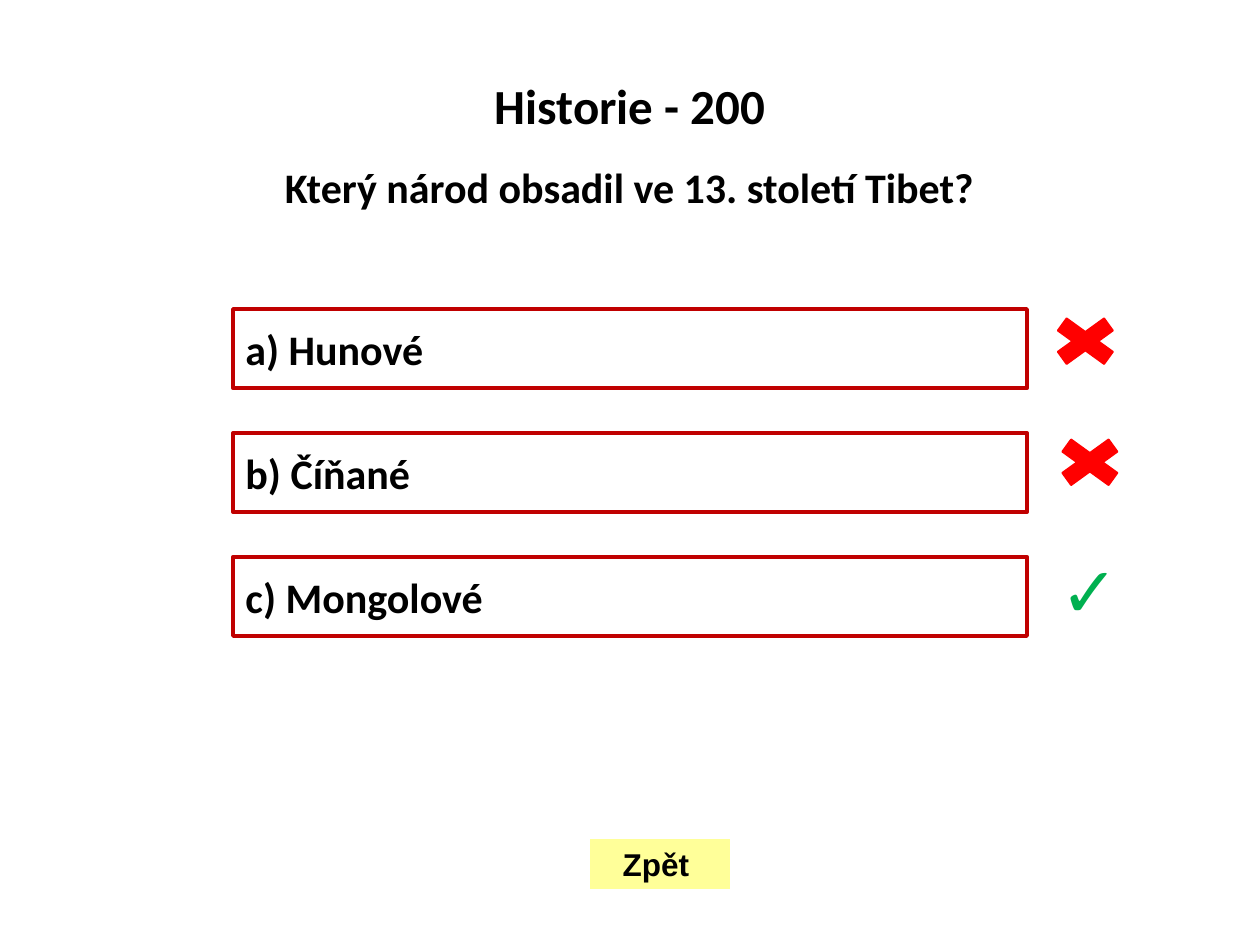
from pptx import Presentation
from pptx.dml.color import RGBColor
from pptx.enum.shapes import MSO_SHAPE
from pptx.enum.text import MSO_ANCHOR, PP_ALIGN
from pptx.util import Pt

BLACK = RGBColor(0x00, 0x00, 0x00)
DARK_RED = RGBColor(0xC0, 0x00, 0x00)
RED = RGBColor(0xFF, 0x00, 0x00)
GREEN = RGBColor(0x00, 0xB0, 0x50)
YELLOW = RGBColor(0xFF, 0xFF, 0x99)


def write(sp, text, size=24, font='Calibri', color=BLACK,
          align=PP_ALIGN.LEFT, anchor=MSO_ANCHOR.TOP, wrap=True):
    tf = sp.text_frame
    tf.word_wrap = wrap
    tf.vertical_anchor = anchor
    p = tf.paragraphs[0]
    p.alignment = align
    r = p.add_run()
    r.text = text
    r.font.size = Pt(size)
    r.font.name = font
    r.font.bold = True
    r.font.color.rgb = color
    return p


prs = Presentation()
prs.slide_width, prs.slide_height = Pt(720), Pt(540)
s = prs.slides.add_slide(prs.slide_layouts[5])

title = s.shapes.title
title.left, title.top, title.width, title.height = Pt(0), Pt(43.2), Pt(720), Pt(57)
p = write(title, 'Historie - 200', size=28, align=PP_ALIGN.CENTER)
p.line_spacing = 0.9

question = s.shapes.add_textbox(Pt(121.7), Pt(88.6), Pt(476), Pt(36))
write(question, 'Který národ obsadil ve 13. století Tibet?', align=PP_ALIGN.CENTER)

for i, answer in enumerate(['a) Hunové', 'b) Číňané', 'c) Mongolové']):
    sp = s.shapes.add_shape(MSO_SHAPE.ACTION_BUTTON_CUSTOM,
                            Pt(133.2), Pt(176.6 + i * 70.8), Pt(453.6), Pt(45.2))
    sp.shadow.inherit = False
    sp.fill.background()
    sp.line.color.rgb = DARK_RED
    sp.line.width = Pt(2.25)
    write(sp, answer, anchor=MSO_ANCHOR.MIDDLE, wrap=False)

for left, top in [(594.7, 176.6), (597.3, 245.8)]:
    cross = s.shapes.add_shape(MSO_SHAPE.MATH_MULTIPLY, Pt(left), Pt(top), Pt(51), Pt(36.8))
    cross.shadow.inherit = False
    cross.fill.solid()
    cross.fill.fore_color.rgb = RED
    cross.line.color.rgb = RED
    cross.line.width = Pt(1)

tick = s.shapes.add_textbox(Pt(599), Pt(309.6), Pt(42.5), Pt(55.4))
write(tick, '✓', size=40, font='Arial', color=GREEN)

back = s.shapes.add_shape(MSO_SHAPE.ACTION_BUTTON_CUSTOM,
                          Pt(337.3), Pt(479.5), Pt(80), Pt(28.8))
back.shadow.inherit = False
back.fill.solid()
back.fill.fore_color.rgb = YELLOW
back.line.fill.background()
write(back, 'Zpět', size=18, font='Arial', align=PP_ALIGN.CENTER,
      anchor=MSO_ANCHOR.MIDDLE, wrap=False)
back.text_frame.margin_right = Pt(12)

prs.save('out.pptx')
